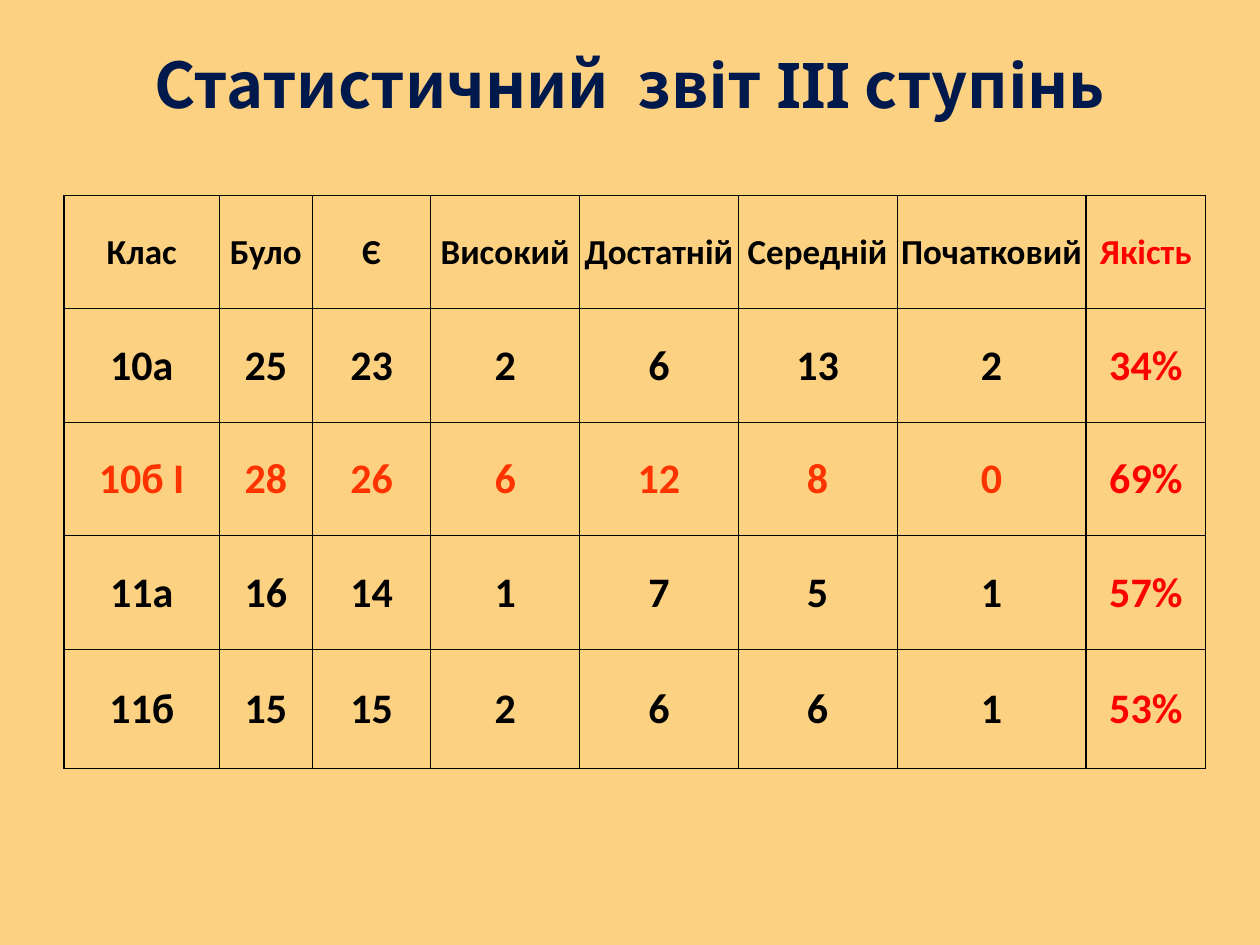
import pptx
import pptx.dml.color
import pptx.enum.text
import pptx.oxml.ns
import pptx.util
from lxml import etree

Inches = pptx.util.Inches
Pt = pptx.util.Pt
MIDDLE = pptx.enum.text.MSO_ANCHOR.MIDDLE

BACKGROUND = "FCD181"
NAVY = "00194C"
BLACK = "000000"
RED = "FF0000"
ORANGE = "FF3300"

TITLE = "Статистичний  звіт ІІІ ступінь"
HEADER = ["Клас", "Було", "Є", "Високий", "Достатній", "Середній", "Початковий", "Якість"]
CLASSES = [
    ["10а", "25", "23", "2", "6", "13", "2", "34%"],
    ["10б І", "28", "26", "6", "12", "8", "0", "69%"],
    ["11а", "16", "14", "1", "7", "5", "1", "57%"],
    ["11б", "15", "15", "2", "6", "6", "1", "53%"],
]
HIGHLIGHTED_CLASS = "10б І"
COLUMN_WIDTHS = [1.23, 0.74, 0.94, 1.18, 1.26, 1.26, 1.5, 0.95]
ROW_HEIGHTS = [0.9, 0.9, 0.9, 0.9, 0.95]
THIN, THICK = 0.5, 1


def color(value):
    return pptx.dml.color.RGBColor.from_string(value)


def write(frame, text, **font_values):
    paragraph = frame.paragraphs[0]
    paragraph.alignment = pptx.enum.text.PP_ALIGN.CENTER
    run = paragraph.add_run()
    run.text = text
    run.font.color.rgb = color(font_values.pop("color"))
    run.font.bold = True
    for name, value in font_values.items():
        setattr(run.font, name, value)


def set_borders(cell, widths):
    """Draw black cell borders; widths maps a side (L, R, T, B) to points."""
    properties = cell._tc.get_or_add_tcPr()
    qn = pptx.oxml.ns.qn
    for side, width in widths.items():
        line = etree.SubElement(properties, qn(f"a:ln{side}"), w=str(Pt(width)))
        fill = etree.SubElement(line, qn("a:solidFill"))
        etree.SubElement(fill, qn("a:srgbClr"), val=BLACK)


def add_title(slide):
    box = slide.shapes.add_textbox(Inches(0), Inches(0.25), Inches(10), Inches(0.83))
    frame = box.text_frame
    frame.word_wrap = True
    frame.vertical_anchor = MIDDLE
    write(frame, TITLE, color=NAVY, size=Pt(36), name="Noto Sans CJK KR")


def add_report(slide):
    rows = [HEADER] + CLASSES
    last_row, last_column = len(rows) - 1, len(HEADER) - 1
    table = slide.shapes.add_table(
        len(rows), len(HEADER), Inches(0.51), Inches(1.55),
        Inches(sum(COLUMN_WIDTHS)), Inches(sum(ROW_HEIGHTS))).table
    table.first_row = table.horz_banding = False
    for column, width in zip(table.columns, COLUMN_WIDTHS):
        column.width = Inches(width)
    for row, height in zip(table.rows, ROW_HEIGHTS):
        row.height = Inches(height)

    cell_format = {
        "vertical_anchor": MIDDLE,
        "margin_left": Inches(0.01),
        "margin_right": Inches(0.01),
        "margin_top": Inches(0.01),
        "margin_bottom": 0,
    }
    for r, values in enumerate(rows):
        row_color = ORANGE if values[0] == HIGHLIGHTED_CLASS else BLACK
        for c, text in enumerate(values):
            cell = table.cell(r, c)
            for name, value in cell_format.items():
                setattr(cell, name, value)
            set_borders(cell, {
                "L": THICK if c in (0, last_column) else THIN,
                "R": THICK if c >= last_column - 1 else THIN,
                "T": THICK if r == 0 else THIN,
                "B": THICK if r == last_row else THIN,
            })
            cell.fill.background()
            write(cell.text_frame, text, name="Calibri",
                  size=Pt(20 if r == 0 else 24),
                  color=RED if c == last_column else row_color)


def main():
    presentation = pptx.Presentation()
    presentation.slide_width = Inches(10)
    presentation.slide_height = Inches(7.5)
    slide = presentation.slides.add_slide(presentation.slide_layouts[6])
    slide.background.fill.solid()
    slide.background.fill.fore_color.rgb = color(BACKGROUND)
    add_title(slide)
    add_report(slide)
    presentation.save("out.pptx")


if __name__ == "__main__":
    main()
